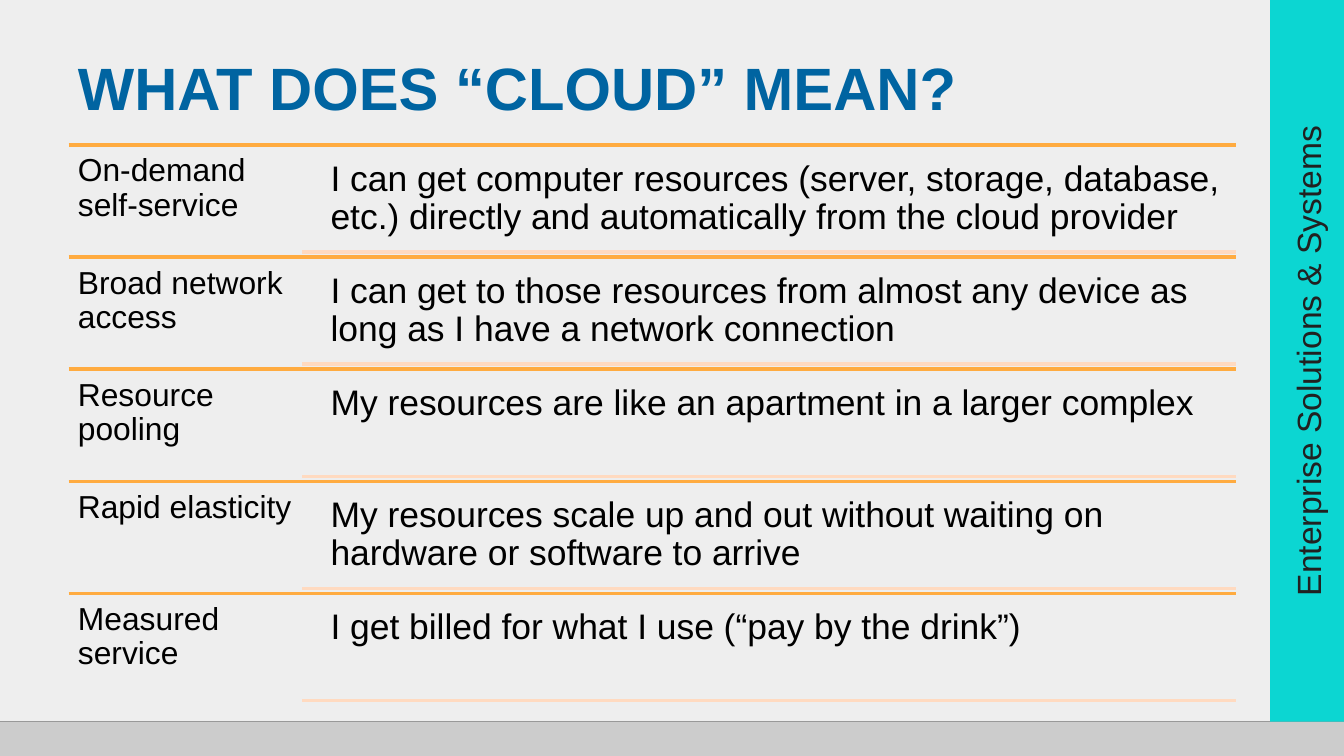
import pptx
import pptx.dml.color
import pptx.enum.shapes
import pptx.enum.text
import pptx.oxml.ns
import pptx.util
from lxml import etree
from pptx.util import Inches

# Content
TITLE = "WHAT DOES “CLOUD” MEAN?"
SIDE_LABEL = "Enterprise Solutions & Systems"
ROWS = [
    ("On-demand self-service",
     "I can get computer resources (server, storage, database, etc.) "
     "directly and automatically from the cloud provider"),
    ("Broad network access",
     "I can get to those resources from almost any device as long as "
     "I have a network connection"),
    ("Resource pooling",
     "My resources are like an apartment in a larger complex"),
    ("Rapid elasticity",
     "My resources scale up and out without waiting on hardware or "
     "software to arrive"),
    ("Measured service",
     "I get billed for what I use (“pay by the drink”)"),
]

# Layout, in inches
SLIDE_WIDTH = 10
SLIDE_HEIGHT = SLIDE_WIDTH * 9 / 16
LEFT, RIGHT = 0.51, 9.2
LABEL_WIDTH = 1.74
TEXT_LEFT = 2.38
TOP, BOTTOM = 1.08, 5.25
ROW_HEIGHT = (BOTTOM - TOP) / len(ROWS)
TEXT_HEIGHT = 0.76
TEXT_OFFSET = (ROW_HEIGHT - TEXT_HEIGHT) / 2
FOOTER_TOP = 5.37


def color(value):
    return pptx.dml.color.RGBColor.from_string(value)


def add_bar(left, top, width, height, fill):
    bar = page.shapes.add_shape(
        pptx.enum.shapes.MSO_SHAPE.RECTANGLE,
        Inches(left), Inches(top), Inches(width), Inches(height))
    bar.shadow.inherit = False
    bar.fill.solid()
    bar.fill.fore_color.rgb = color(fill)
    bar.line.fill.background()
    return bar


def add_rule(left, right, top, line_color, width):
    rule = page.shapes.add_connector(
        pptx.enum.shapes.MSO_CONNECTOR.STRAIGHT,
        Inches(left), Inches(top), Inches(right), Inches(top))
    rule.line.color.rgb = color(line_color)
    rule.line.width = pptx.util.Pt(width)
    etree.SubElement(rule._element.spPr, pptx.oxml.ns.qn("a:effectLst"))


def write(shape, text, size, text_color, inset, bold=False):
    frame = shape.text_frame
    frame.word_wrap = True
    frame.auto_size = pptx.enum.text.MSO_AUTO_SIZE.NONE
    frame.vertical_anchor = pptx.enum.text.MSO_ANCHOR.TOP
    frame.margin_left = frame.margin_right = Inches(inset)
    frame.margin_top = frame.margin_bottom = Inches(inset)
    para = frame.paragraphs[0]
    para.alignment = pptx.enum.text.PP_ALIGN.LEFT
    span = para.add_run()
    span.text = text
    span.font.name = "Arial"
    span.font.size = pptx.util.Pt(size)
    span.font.bold = bold
    span.font.color.rgb = color(text_color)
    return frame


def add_cell(left, top, width, height, text, size, inset):
    box = page.shapes.add_textbox(
        Inches(left), Inches(top), Inches(width), Inches(height))
    write(box, text, size, "000000", inset).paragraphs[0].line_spacing = 0.9


deck = pptx.Presentation()
deck.slide_width, deck.slide_height = Inches(SLIDE_WIDTH), Inches(SLIDE_HEIGHT)
page = deck.slides.add_slide(deck.slide_layouts[5])
page.background.fill.solid()
page.background.fill.fore_color.rgb = color("EEEEEE")

# Footer band and side bar
add_bar(0, FOOTER_TOP, 10.01, 0.28, "CCCCCC")
add_rule(-0.01, 10.01, FOOTER_TOP, "999999", 0.75)
side_bar = add_bar(9.45, 0, 0.56, FOOTER_TOP, "0CD6D2")
side_frame = write(side_bar, SIDE_LABEL, 18, "212121", 0.05)
side_frame.vertical_anchor = pptx.enum.text.MSO_ANCHOR.MIDDLE
side_frame.paragraphs[0].alignment = pptx.enum.text.PP_ALIGN.CENTER
side_frame._txBody.bodyPr.set("vert", "vert270")

# Title
title = page.shapes.title
title.left, title.top = Inches(LEFT), Inches(0.34)
title.width, title.height = Inches(6.95), Inches(0.57)
title_frame = write(title, TITLE, 32, "0064A1", 0.07, bold=True)
title_frame.margin_top = title_frame.margin_bottom = Inches(0.04)

# Rows of terms and meanings
for index, (term, meaning) in enumerate(ROWS):
    top = TOP + index * ROW_HEIGHT
    text_top = top + TEXT_OFFSET
    add_rule(LEFT, RIGHT, top, "FFAB40", 2)
    add_cell(LEFT, top, LABEL_WIDTH, ROW_HEIGHT, term, 17, 0.07)
    add_cell(TEXT_LEFT, text_top, RIGHT - TEXT_LEFT, TEXT_HEIGHT,
             meaning, 19, 0.08)
    add_rule(LEFT + LABEL_WIDTH, RIGHT, text_top + TEXT_HEIGHT, "FFDAC0", 2)

deck.save("out.pptx")
